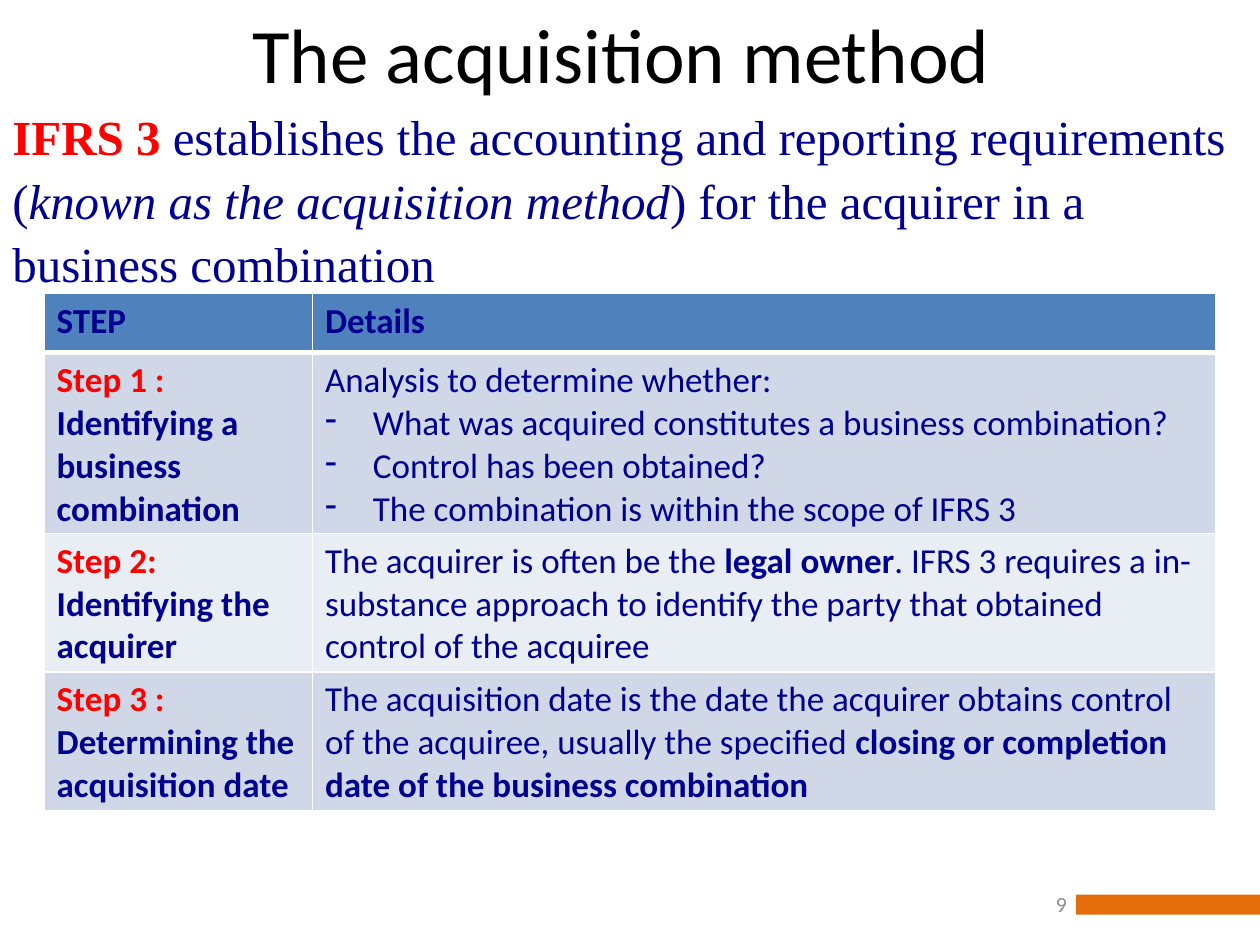
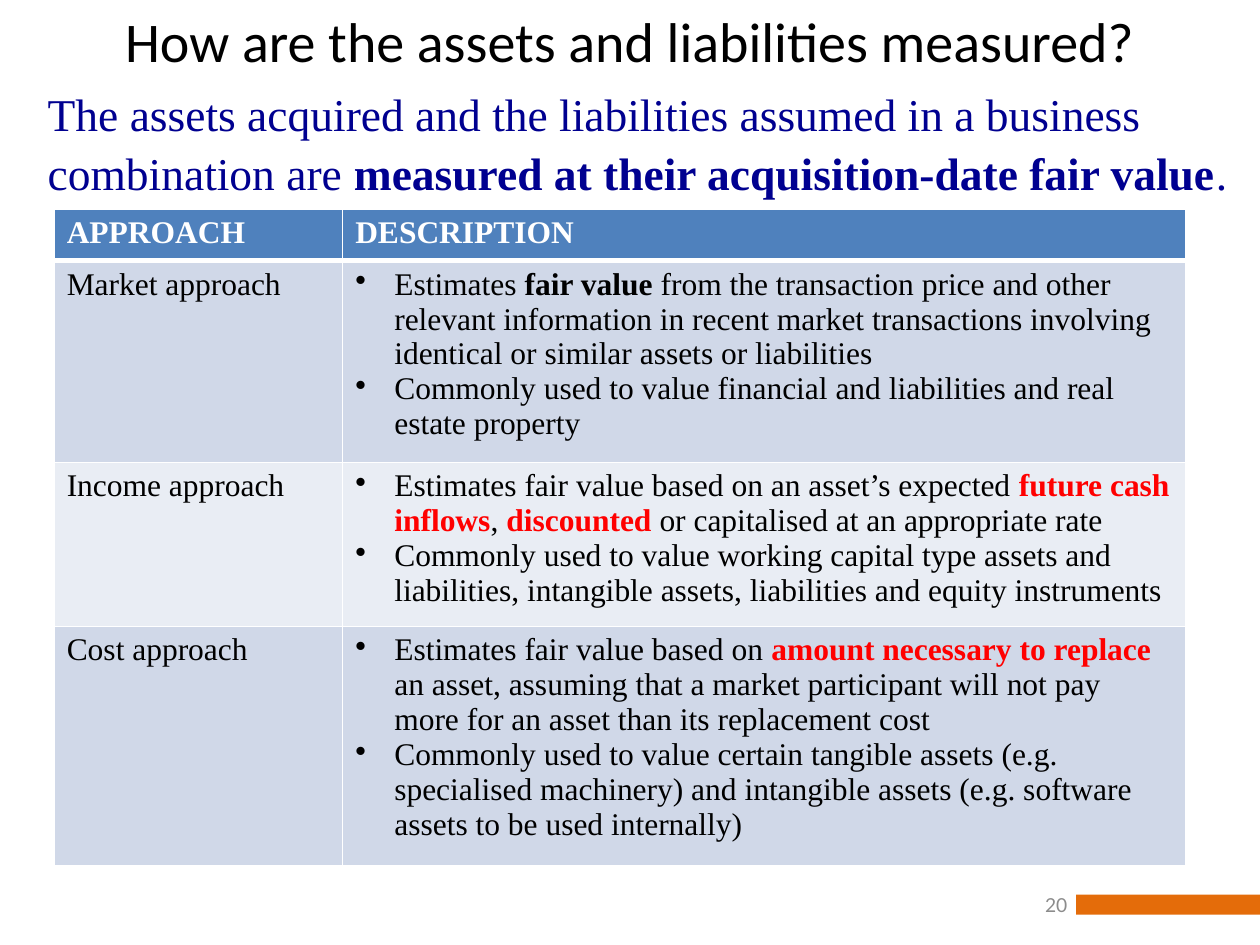
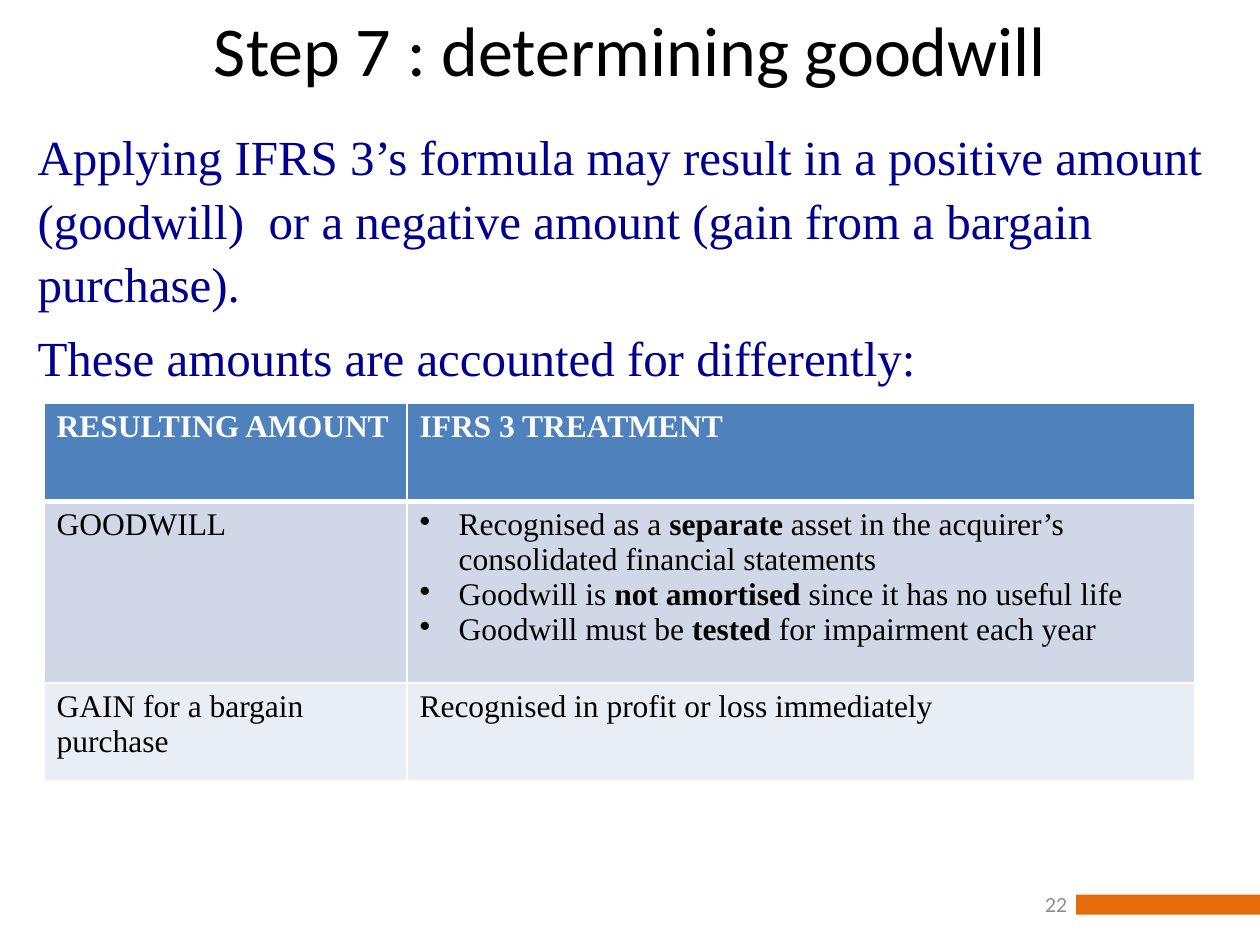
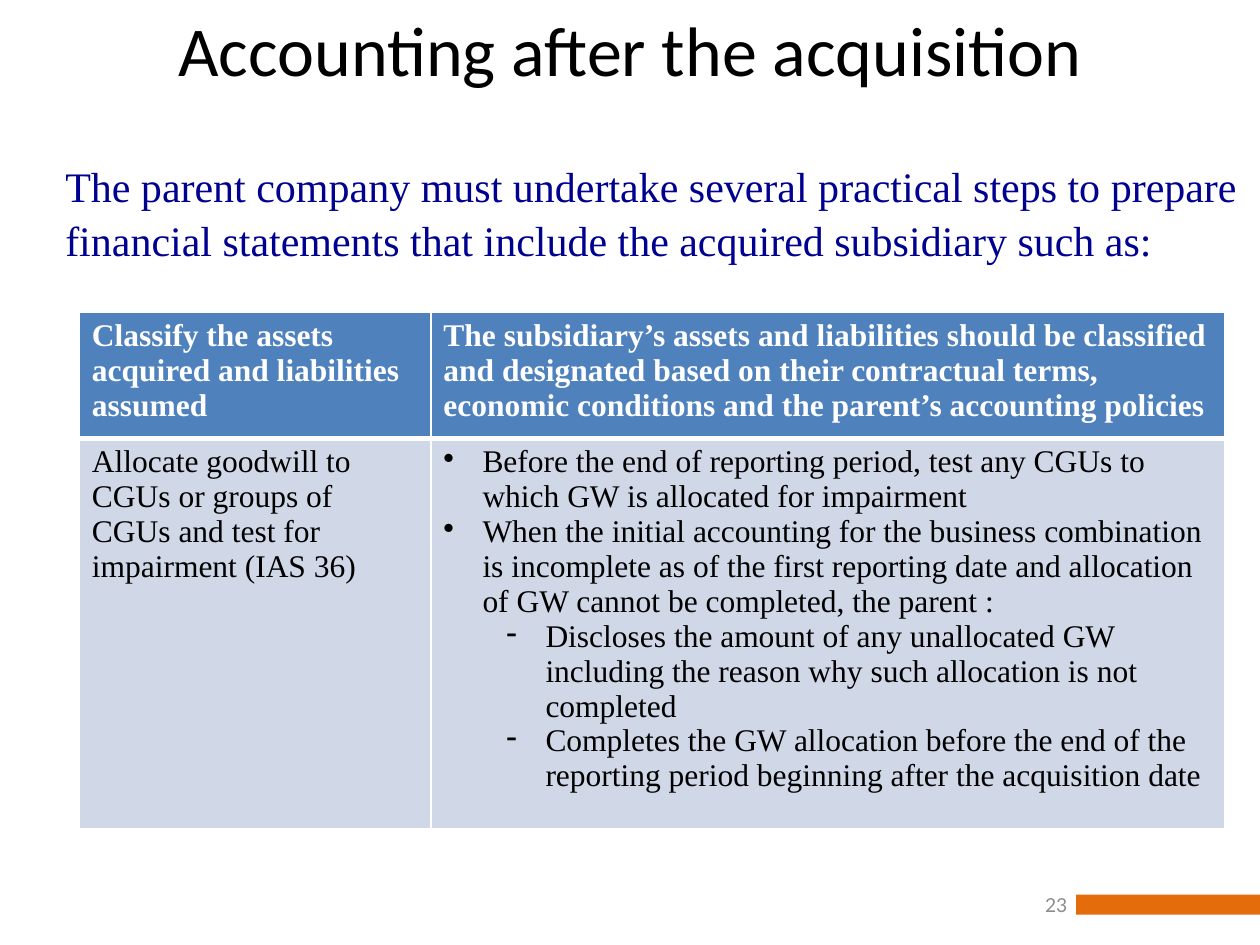
from dataclasses import dataclass
from typing import NamedTuple, Optional

from lxml import etree
from pptx import Presentation
from pptx import util as u
from pptx.dml.color import RGBColor
from pptx.enum import shapes, text
from pptx.oxml import ns

COLORS = {
    "black": "000000",
    "white": "FFFFFF",
    "navy": "000090",
    "red": "FF0000",
    "gray": "8C8C8C",
    "orange": "E46C0A",
    "header": "4F81BD",
    "odd row": "D0D8E8",
    "even row": "E9EDF4",
}
TITLE_FONT, BODY_FONT, NUMBER_FONT = "Calibri", "Times New Roman", "Lato"
BODY_LINE_SPACING = 1.08
TITLE_ONLY = 5


# Text model: unset run formats fall back to the style of the block
class Run(NamedTuple):
    text: str
    color: Optional[str] = None
    bold: Optional[bool] = None
    italic: bool = False


@dataclass
class Style:
    font: str
    size: float
    color: str
    bold: bool = False


@dataclass
class Para:
    runs: list[Run]
    bullet: str = ""
    indent: float = 0.31
    level: int = 0


class Box(NamedTuple):
    left: float
    top: float
    width: float
    height: float


@dataclass
class Grid:
    box: Box
    columns: list[float]
    rows: list[float]
    header: Style
    body: Style
    cells: list[list[list[Para]]]


@dataclass
class Page:
    number: int
    title: str
    title_size: float
    title_height: float
    intro_box: Box
    intro_size: float
    intro: list[Para]
    grid: Grid


# Shorthands for content
def para(*parts: str | Run) -> Para:
    return Para([part if isinstance(part, Run) else Run(part) for part in parts])


def bullet(*parts: str | Run) -> Para:
    return Para(para(*parts).runs, "•")


def dash(content: str, indent: float = 0.31, level: int = 0) -> Para:
    return Para([Run(content)], "-", indent, level)


def bold(content: str) -> Run:
    return Run(content, bold=True)


def red(content: str) -> Run:
    return Run(content, "red", True)


def step(label: str, content: str, split: bool = True) -> list[Para]:
    if split:
        return [para(red(label)), para(bold(content))]
    return [para(red(label), bold(content))]


# Drawing helpers
def rgb(name: str) -> RGBColor:
    return RGBColor.from_string(COLORS[name])


def inches(box: Box) -> list[u.Length]:
    return [u.Inches(value) for value in box]


def write(frame, paras: list[Para], style: Style, spacing: Optional[float] = None,
          align: Optional[text.PP_ALIGN] = None) -> None:
    frame.word_wrap = True
    for index, item in enumerate(paras):
        paragraph = frame.add_paragraph() if index else frame.paragraphs[0]
        if item.level:
            paragraph.level = item.level
        if align is not None:
            paragraph.alignment = align
        if spacing:
            paragraph.line_spacing = spacing
            paragraph.space_before = u.Pt(style.size * 0.2 if index else 0)
        if item.bullet:
            properties = paragraph._p.get_or_add_pPr()
            margin = item.indent + item.level * 0.5
            properties.set("marL", str(u.Inches(margin)))
            properties.set("indent", str(-u.Inches(item.indent)))
            etree.SubElement(properties, ns.qn("a:buChar"), char=item.bullet)
        paragraph.font.name = style.font
        paragraph.font.size = u.Pt(style.size)
        for part in item.runs:
            run = paragraph.add_run()
            run.text = part.text
            run.font.color.rgb = rgb(part.color or style.color)
            run.font.bold = style.bold if part.bold is None else part.bold
            if part.italic:
                run.font.italic = True


def add_text(slide, box: Box, paras: list[Para], style: Style,
             spacing: Optional[float] = None, align: Optional[text.PP_ALIGN] = None,
             anchor: text.MSO_ANCHOR = text.MSO_ANCHOR.TOP) -> None:
    frame = slide.shapes.add_textbox(*inches(box)).text_frame
    frame.vertical_anchor = anchor
    write(frame, paras, style, spacing, align)


def set_borders(cell, top: float, bottom: float) -> None:
    properties = cell._tc.get_or_add_tcPr()
    for side, width in (("L", 1), ("R", 1), ("T", top), ("B", bottom)):
        line = etree.SubElement(properties, ns.qn(f"a:ln{side}"), w=str(u.Pt(width)))
        fill = etree.SubElement(line, ns.qn("a:solidFill"))
        etree.SubElement(fill, ns.qn("a:srgbClr"), val=COLORS["white"])


def add_grid(slide, grid: Grid) -> None:
    graphic = slide.shapes.add_table(len(grid.rows), len(grid.columns), *inches(grid.box))
    table = graphic.table
    table.first_row = table.horz_banding = False
    for column, width in zip(table.columns, grid.columns):
        column.width = u.Inches(width)
    for row, height in zip(table.rows, grid.rows):
        row.height = u.Inches(height)
    graphic.height = u.Inches(grid.box.height)
    for row, contents in enumerate(grid.cells):
        shade = "header" if row == 0 else "odd row" if row % 2 else "even row"
        for column, paras in enumerate(contents):
            cell = table.cell(row, column)
            set_borders(cell, top=3 if row == 1 else 1, bottom=3 if row == 0 else 1)
            cell.fill.solid()
            cell.fill.fore_color.rgb = rgb(shade)
            write(cell.text_frame, paras, grid.body if row else grid.header)


def add_band(slide) -> None:
    band = slide.shapes.add_shape(shapes.MSO_SHAPE.RECTANGLE,
                                  *inches(Box(8.54, 7.1, 1.46, 0.16)))
    band.shadow.inherit = False
    band.fill.solid()
    band.fill.fore_color.rgb = rgb("orange")
    band.line.fill.background()


def add_title(slide, page: Page) -> None:
    title = slide.shapes.title
    title.left, title.top, title.width, title.height = inches(
        Box(0, 0, 10, page.title_height))
    title.text_frame.auto_size = text.MSO_AUTO_SIZE.NONE
    title.text_frame.vertical_anchor = text.MSO_ANCHOR.TOP
    write(title.text_frame, [para(page.title)],
          Style(TITLE_FONT, page.title_size, "black"), align=text.PP_ALIGN.CENTER)


def add_page(presentation, page: Page) -> None:
    slide = presentation.slides.add_slide(presentation.slide_layouts[TITLE_ONLY])
    add_band(slide)
    add_title(slide, page)
    add_text(slide, Box(6.24, 6.98, 2.33, 0.4), [para(str(page.number))],
             Style(NUMBER_FONT, 11, "gray"), align=text.PP_ALIGN.RIGHT,
             anchor=text.MSO_ANCHOR.MIDDLE)
    add_text(slide, page.intro_box, page.intro,
             Style(BODY_FONT, page.intro_size, "navy"), BODY_LINE_SPACING)
    add_grid(slide, page.grid)


# Table styles
STEP_HEADER = Style(TITLE_FONT, 20, "navy", True)
STEP_BODY = Style(TITLE_FONT, 20, "navy")
HEADER = Style(BODY_FONT, 18, "white", True)
BODY = Style(BODY_FONT, 18, "black")

# Slide contents
PAGES = [
    Page(
        9, "The acquisition method ", 44, 1.06, Box(0, 0.76, 10, 1.57), 28,
        [para(red("IFRS 3 "), "establishes the accounting and reporting requirements (",
              Run("known as the acquisition method", italic=True),
              ") for the acquirer in a business combination")],
        Grid(Box(0.35, 2.33, 9.29, 4.11), [2.13, 7.17], [0.47] + [1.08] * 3,
             STEP_HEADER, STEP_BODY, [
            [[para("STEP")], [para("Details")]],
            [step("Step 1 : ", "Identifying a business combination", split=False),
             [para("Analysis to determine whether:"),
              dash("What was acquired constitutes a business combination?", 0.38),
              dash("Control has been obtained?", 0.38),
              dash("The combination is within the scope of IFRS 3", 0.38)]],
            [step("Step 2:", "Identifying the acquirer"),
             [para("The acquirer is often be the ", bold("legal owner"),
                   ". IFRS 3 requires a in-substance approach to identify the party "
                   "that obtained control of the acquiree")]],
            [step("Step 3 :", "Determining the acquisition date"),
             [para("The acquisition date is the date the acquirer obtains control of "
                   "the acquiree, usually the specified ",
                   bold("closing or completion date of the business combination"))]],
        ]),
    ),
    Page(
        20, "How are the assets and liabilities measured?", 32, 1.06,
        Box(0.28, 0.6, 9.72, 1.02), 26,
        [para("The assets acquired and the liabilities assumed in a business "
              "combination are ",
              bold("measured at their acquisition-date fair value"), ".")],
        Grid(Box(0.43, 1.66, 8.98, 5.21), [2.29, 6.69], [0.41] * 4, HEADER, BODY, [
            [[para("APPROACH")], [para("DESCRIPTION")]],
            [[para("Market approach")],
             [bullet("Estimates ", bold("fair value "),
                     "from the transaction price and other relevant information in "
                     "recent market transactions involving identical or similar "
                     "assets or liabilities"),
              bullet("Commonly used to value financial and liabilities and real "
                     "estate property")]],
            [[para("Income approach")],
             [bullet("Estimates fair value based on an asset’s expected ",
                     red("future cash inflows"), ",", red(" discounted "),
                     "or capitalised at an appropriate rate"),
              bullet("Commonly used to value working capital type assets and "
                     "liabilities, intangible assets, liabilities and equity "
                     "instruments")]],
            [[para("Cost approach")],
             [bullet("Estimates fair value based on ",
                     red("amount necessary to replace "),
                     "an asset, assuming that a market participant will not pay more "
                     "for an asset than its replacement cost"),
              bullet("Commonly used to value certain tangible assets (e.g. "
                     "specialised machinery) and intangible assets (e.g. software "
                     "assets to be used internally)")]],
        ]),
    ),
    Page(
        22, "Step 7 : determining goodwill", 40, 0.99, Box(0.2, 0.92, 9.53, 2.13), 28,
        [para("Applying IFRS 3’s formula may result in a positive amount (goodwill)  "
              "or a negative amount (gain from a bargain purchase)."),
         para("These amounts are accounted for differently:")],
        Grid(Box(0.35, 3.2, 9.13, 3), [2.88, 6.25], [0.78, 1.44, 0.78], HEADER, BODY, [
            [[para("RESULTING AMOUNT")], [para("IFRS 3 TREATMENT")]],
            [[para("GOODWILL")],
             [bullet("Recognised as a ", bold("separate"),
                     " asset in the acquirer’s consolidated financial statements"),
              bullet("Goodwill is ", bold("not amortised "),
                     "since it has no useful life"),
              bullet("Goodwill must be ", bold("tested"),
                     " for impairment each year")]],
            [[para("GAIN for a bargain purchase")],
             [para("Recognised in profit or loss immediately")]],
        ]),
    ),
    Page(
        23, "Accounting after the acquisition", 40, 0.99, Box(0.42, 1.19, 9.53, 1.1), 24,
        [para("The parent company must undertake several practical steps to prepare "
              "financial statements that include the acquired subsidiary such as:")],
        Grid(Box(0.63, 2.48, 9.09, 4.1), [2.79, 6.3], [0.41] * 2, HEADER, BODY, [
            [[para("Classify the assets acquired and liabilities assumed")],
             [para("The subsidiary’s assets and liabilities should be classified and "
                   "designated based on their contractual terms, economic conditions "
                   "and the parent’s accounting policies")]],
            [[para("Allocate goodwill to CGUs or groups of CGUs and test for "
                   "impairment (IAS 36)")],
             [bullet("Before the end of reporting period, test any CGUs to which GW "
                     "is allocated for impairment"),
              bullet("When the initial accounting for the business combination is "
                     "incomplete as of the first reporting date and allocation of GW "
                     "cannot be completed, the parent :"),
              dash("Discloses the amount of any unallocated GW including the reason "
                   "why such allocation is not completed", level=1),
              dash("Completes the GW allocation before the end of the reporting "
                   "period beginning after the acquisition date", level=1)]],
        ]),
    ),
]


def main() -> None:
    presentation = Presentation()
    presentation.slide_width = u.Inches(10)
    presentation.slide_height = u.Inches(7.5)
    for page in PAGES:
        add_page(presentation, page)
    presentation.save("out.pptx")


if __name__ == "__main__":
    main()
